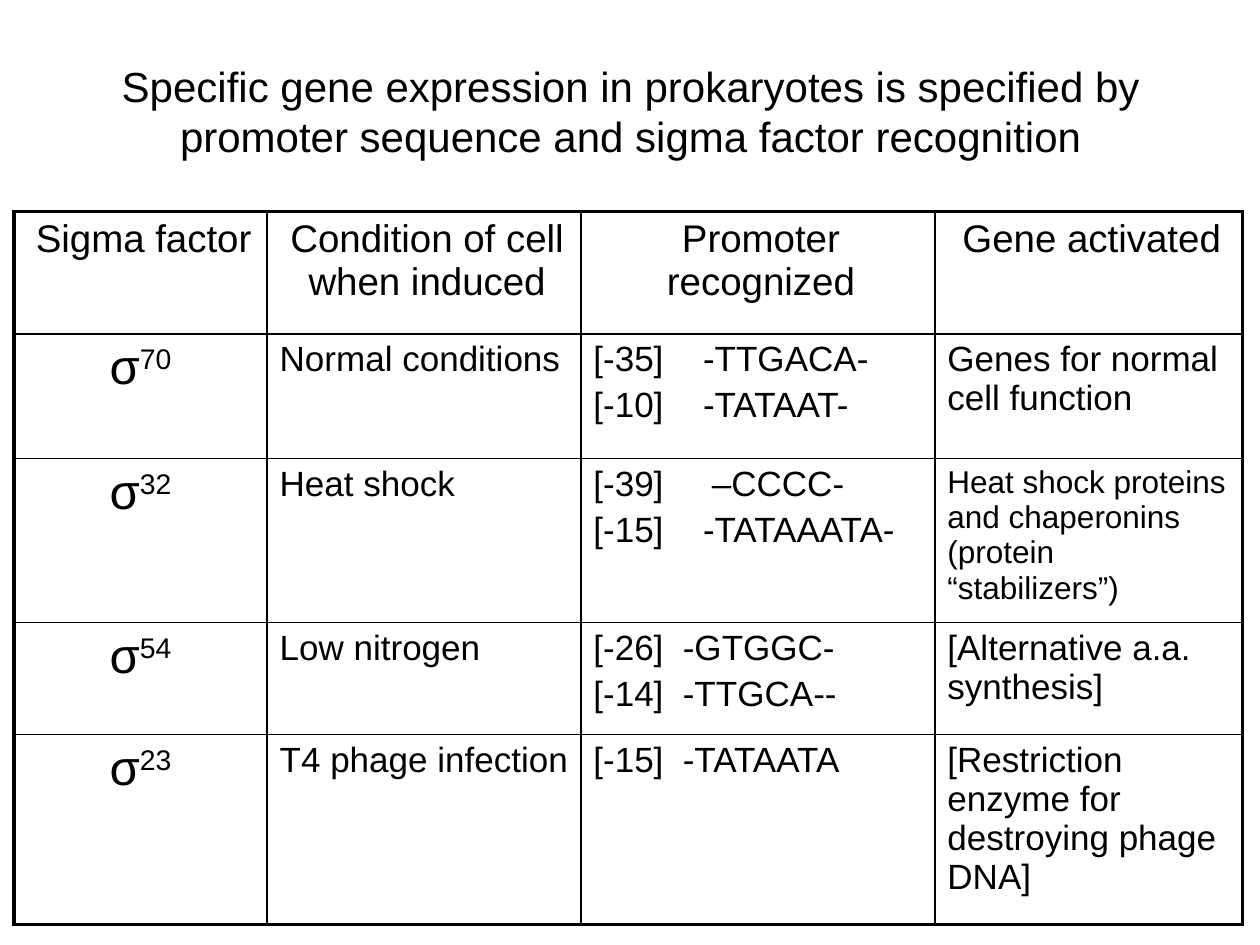
"""Build a slide with a table of prokaryotic sigma factors and their promoters."""
from lxml.etree import SubElement
from pptx import Presentation
from pptx.dml.color import RGBColor
from pptx.enum.text import MSO_ANCHOR, PP_ALIGN
from pptx.oxml.ns import qn
from pptx.util import Inches, Pt

BLACK = RGBColor(0, 0, 0)
FONT = "Arial"
THIN, THICK = 1, 2.25
TITLE = ("Specific gene expression in prokaryotes is specified by "
         "promoter sequence and sigma factor recognition")
HEADERS = ["Sigma factor", "Condition of cell when induced",
           "Promoter recognized", "Gene activated"]
ROWS = [
    ("70", "Normal conditions",
     [("[-35]", "-TTGACA-", 0.87), ("[-10]", "-TATAAT-", 0.87)],
     "Genes for normal cell function", 20),
    ("32", "Heat shock",
     [("[-39]", "–CCCC-", 0.94), ("[-15]", "-TATAAATA-", 0.87)],
     "Heat shock proteins and chaperonins (protein “stabilizers”)", 18),
    ("54", "Low nitrogen",
     [("[-26]", "-GTGGC-", 0.71), ("[-14]", "-TTGCA--", 0.71)],
     "[Alternative a.a. synthesis]", 20),
    ("23", "T4 phage infection", [("[-15]", "-TATAATA", 0.71)],
     "[Restriction enzyme for destroying phage DNA]", 20),
]
COL_WIDTHS = [2.01, 2.49, 2.81, 2.44]
ROW_HEIGHTS = [0.97, 0.99, 1.3, 0.89, 1.51]


def set_font(p, size):
    p.font.name = FONT
    p.font.size = Pt(size)
    p.font.color.rgb = BLACK


def style(p, size, align=PP_ALIGN.LEFT, tab=None):
    p.alignment = align
    p.space_before = Pt(size * 0.2)
    if tab:
        tabs = SubElement(p._p.get_or_add_pPr(), qn("a:tabLst"))
        SubElement(tabs, qn("a:tab"), pos=str(Inches(tab)), algn="l")
    set_font(p, size)


def add_border(cell, side, width):
    ln = SubElement(cell._tc.get_or_add_tcPr(), qn(f"a:ln{side}"), w=str(Pt(width)))
    fill = SubElement(ln, qn("a:solidFill"))
    SubElement(fill, qn("a:srgbClr"), val=str(BLACK))


def format_cell(cell, row, col):
    last_row, last_col = len(ROW_HEIGHTS) - 1, len(COL_WIDTHS) - 1
    cell.margin_left = Inches(0.1)
    cell.margin_right = Inches(0.1 if row else 0.05)
    cell.margin_top = cell.margin_bottom = Inches(0.05)
    outer = {"L": col == 0, "R": col == last_col, "T": row == 0, "B": row == last_row}
    for side, is_outer in outer.items():
        add_border(cell, side, THICK if is_outer else THIN)
    cell.fill.background()


def write(cell, text, size, align=PP_ALIGN.LEFT):
    cell.text = text
    style(cell.text_frame.paragraphs[0], size, align)


def write_sigma(cell, number):
    p = cell.text_frame.paragraphs[0]
    style(p, 28, PP_ALIGN.CENTER)
    p.add_run().text = "σ"
    r = p.add_run()
    r.text = number
    r.font._element.set("baseline", "30000")


def write_promoter(cell, sites):
    tf = cell.text_frame
    for i, (position, sequence, tab) in enumerate(sites):
        p = tf.add_paragraph() if i else tf.paragraphs[0]
        p.add_run().text = f"{position}\t{sequence}"
        style(p, 20, tab=tab)


def main():
    prs = Presentation()
    prs.slide_width, prs.slide_height = Inches(10), Inches(7.5)
    s = prs.slides.add_slide(prs.slide_layouts[6])

    tf = s.shapes.add_textbox(Inches(0.38), Inches(0.38), Inches(9.25), Inches(1)).text_frame
    tf.word_wrap = True
    tf.vertical_anchor = MSO_ANCHOR.MIDDLE
    p = tf.paragraphs[0]
    p.text = TITLE
    p.alignment = PP_ALIGN.CENTER
    set_font(p, 24)

    table = s.shapes.add_table(
        len(ROW_HEIGHTS), len(COL_WIDTHS), Inches(0.11), Inches(1.68),
        Inches(sum(COL_WIDTHS)), Inches(sum(ROW_HEIGHTS))).table
    table.first_row = table.horz_banding = False
    for column, width in zip(table.columns, COL_WIDTHS):
        column.width = Inches(width)
    for i, height in enumerate(ROW_HEIGHTS):
        table.rows[i].height = Inches(height)
        for j in range(len(COL_WIDTHS)):
            format_cell(table.cell(i, j), i, j)

    for j, header in enumerate(HEADERS):
        write(table.cell(0, j), header, 22, PP_ALIGN.CENTER)
    for i, (number, condition, sites, genes, size) in enumerate(ROWS, 1):
        write_sigma(table.cell(i, 0), number)
        write(table.cell(i, 1), condition, 20)
        write_promoter(table.cell(i, 2), sites)
        write(table.cell(i, 3), genes, size)

    prs.save("out.pptx")


if __name__ == "__main__":
    main()
